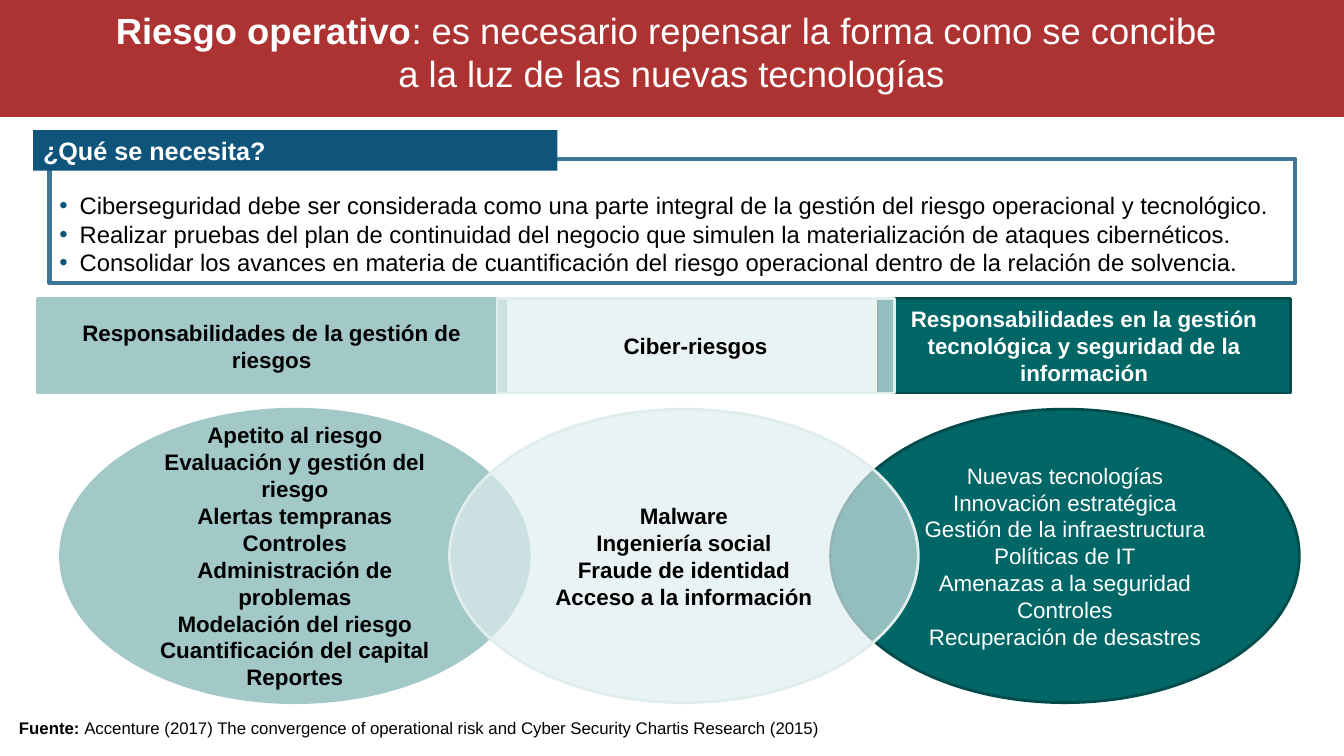
from lxml import etree
from pptx import Presentation
from pptx import util as u
from pptx.dml import color
from pptx.enum import shapes, text
from pptx.oxml import ns

Pt = u.Pt
COLORS = {
    "red": "AD3333", "blue": "0F547B", "frame": "3F7695",
    "teal": "006666", "teal_edge": "004B4B", "sage": "A3C8C8",
    "mist": "E0EDED", "white": "FFFFFF", "black": "000000",
}
FONT = "Arial"
LEADING = 1.2
CENTER = text.PP_ALIGN.CENTER
MIDDLE = text.MSO_ANCHOR.MIDDLE


def rgb(name):
    return color.RGBColor.from_string(COLORS[name])


def sub(parent, tag, **attributes):
    return etree.SubElement(parent, ns.qn(tag), attributes)


def place(part, box):
    part.left, part.top, part.width, part.height = (Pt(v) for v in box)


def add_bullet(paragraph, bullet_color, indent=14.4):
    props = paragraph._p.get_or_add_pPr()
    props.set("marL", str(Pt(indent)))
    props.set("indent", str(-Pt(indent)))
    sub(sub(props, "a:buClr"), "a:srgbClr", val=COLORS[bullet_color])
    sub(props, "a:buFont", typeface=FONT)
    sub(props, "a:buChar", char="•")


def write(part, paragraphs, size=16, ink="black", bold=False, align=None,
          anchor=text.MSO_ANCHOR.TOP, bullet=None, wrap=True, top=3.6):
    """Each paragraph is a string or a list of (string, bold) runs."""
    frame = part.text_frame
    frame.auto_size = text.MSO_AUTO_SIZE.NONE
    frame.word_wrap = wrap
    frame.vertical_anchor = anchor
    frame.margin_left = frame.margin_right = Pt(7.2)
    frame.margin_top, frame.margin_bottom = Pt(top), Pt(3.6)
    for index, content in enumerate(paragraphs):
        paragraph = frame.add_paragraph() if index else frame.paragraphs[0]
        paragraph.alignment = align or text.PP_ALIGN.LEFT
        paragraph.line_spacing = Pt(round(size * LEADING, 1))
        paragraph.space_before = paragraph.space_after = Pt(0)
        if bullet:
            add_bullet(paragraph, bullet)
        runs = [(content, bold)] if isinstance(content, str) else content
        for words, strong in runs:
            run = paragraph.add_run()
            run.text = words
            run.font.name, run.font.size, run.font.bold = FONT, Pt(size), strong
            run.font.color.rgb = rgb(ink)


def add_block(slide, kind, box, fill, edge=None, opacity=None):
    block = slide.shapes.add_shape(kind, *(Pt(v) for v in box))
    block.shadow.inherit = False
    block.fill.solid()
    block.fill.fore_color.rgb = rgb(fill)
    if opacity:
        tint = block._element.spPr.find(ns.qn("a:solidFill"))[0]
        sub(tint, "a:alpha", val=str(opacity * 1000))
    if edge:
        block.line.color.rgb = rgb(edge)
        block.line.width = Pt(2)
    else:
        block.line.fill.background()
    return block


def title_band(slide, box):
    left, top, width, height = box
    band = add_block(slide, shapes.MSO_SHAPE.RECTANGLE, box, "red")
    slide.shapes._spTree.insert(2, band._element)  # behind the title
    title = slide.shapes.title
    place(title, (left, top, width, height - 10))
    write(title, [
        [("Riesgo operativo", True),
         (": es necesario repensar la forma como se concibe ", False)],
        "a la luz de las nuevas tecnologías",
    ], size=26, ink="white", align=CENTER, anchor=MIDDLE)


def needs_panel(slide, box):
    left, top, width, height = box
    # Framed list
    needs = slide.placeholders[1]
    place(needs, box)
    needs.line.color.rgb = rgb("frame")
    needs.line.width = Pt(3)
    write(needs, [
        "Ciberseguridad debe ser considerada como una parte integral de la "
        "gestión del riesgo operacional y tecnológico.",
        "Realizar pruebas del plan de continuidad del negocio que simulen la "
        "materialización de ataques cibernéticos.",
        "Consolidar los avances en materia de cuantificación del riesgo "
        "operacional dentro de la relación de solvencia.",
    ], size=17, bullet="blue", top=22.8)
    # Tab over the frame's upper left corner
    tab = add_block(slide, shapes.MSO_SHAPE.RECTANGLE,
                    (left - 11.6, top - 20.8, 374.4, 29), "blue")
    write(tab, ["¿Qué se necesita?"], size=18, ink="white", bold=True)


def risk_area(slide, box, oval_left, heading, topics, fill, edge,
              ink="black", bold_topics=True, opacity=None):
    left, top, width, height = box
    header = add_block(slide, shapes.MSO_SHAPE.RECTANGLE, box,
                       fill, edge, opacity)
    write(header, [heading], ink=ink, bold=True, align=CENTER, anchor=MIDDLE)
    oval = add_block(slide, shapes.MSO_SHAPE.OVAL,
                     (oval_left, top + 79.2, 334.8, 209.6),
                     fill, edge, opacity)
    write(oval, topics, ink=ink, bold=bold_topics, align=CENTER, anchor=MIDDLE)


def risk_diagram(slide, top, height):
    # Drawn from back to front, the translucent middle area last
    risk_area(slide, (627.1, top, 294.5, height), 593.3,
              "Responsabilidades en la gestión tecnológica y seguridad de la "
              "información",
              ["Nuevas tecnologías", "Innovación estratégica",
               "Gestión de la infraestructura", "Políticas de IT",
               "Amenazas a la seguridad", "Controles",
               "Recuperación de desastres"],
              "teal", "teal_edge", ink="white", bold_topics=False)
    risk_area(slide, (26.6, top, 334.8, height), 43.2,
              "Responsabilidades de la gestión de riesgos",
              ["Apetito al riesgo", "Evaluación y gestión del riesgo",
               "Alertas tempranas", "Controles",
               "Administración de problemas", "Modelación del riesgo",
               "Cuantificación del capital", "Reportes"],
              "sage", "sage")
    risk_area(slide, (355, top, 283.7, height), 321.1,
              "Ciber-riesgos",
              ["Malware", "Ingeniería social", "Fraude de identidad",
               "Acceso a la información"],
              "mist", "mist", opacity=66)


def source_line(slide, box):
    source = slide.shapes.add_textbox(*(Pt(v) for v in box))
    write(source, [[
        ("Fuente: ", True),
        ("Accenture (2017) The convergence of operational risk and Cyber "
         "Security Chartis Research (2015)", False),
    ]], size=12, wrap=False)


def main():
    deck = Presentation()
    deck.slide_width, deck.slide_height = Pt(960), Pt(540)
    slide = deck.slides.add_slide(deck.slide_layouts[1])
    title_band(slide, (0, 0, 960, 83.5))
    needs_panel(slide, (35.3, 113.7, 890, 88.6))
    risk_diagram(slide, top=213.1, height=67.7)
    source_line(slide, (6.5, 509, 587.5, 21.6))
    deck.save("out.pptx")


if __name__ == "__main__":
    main()
